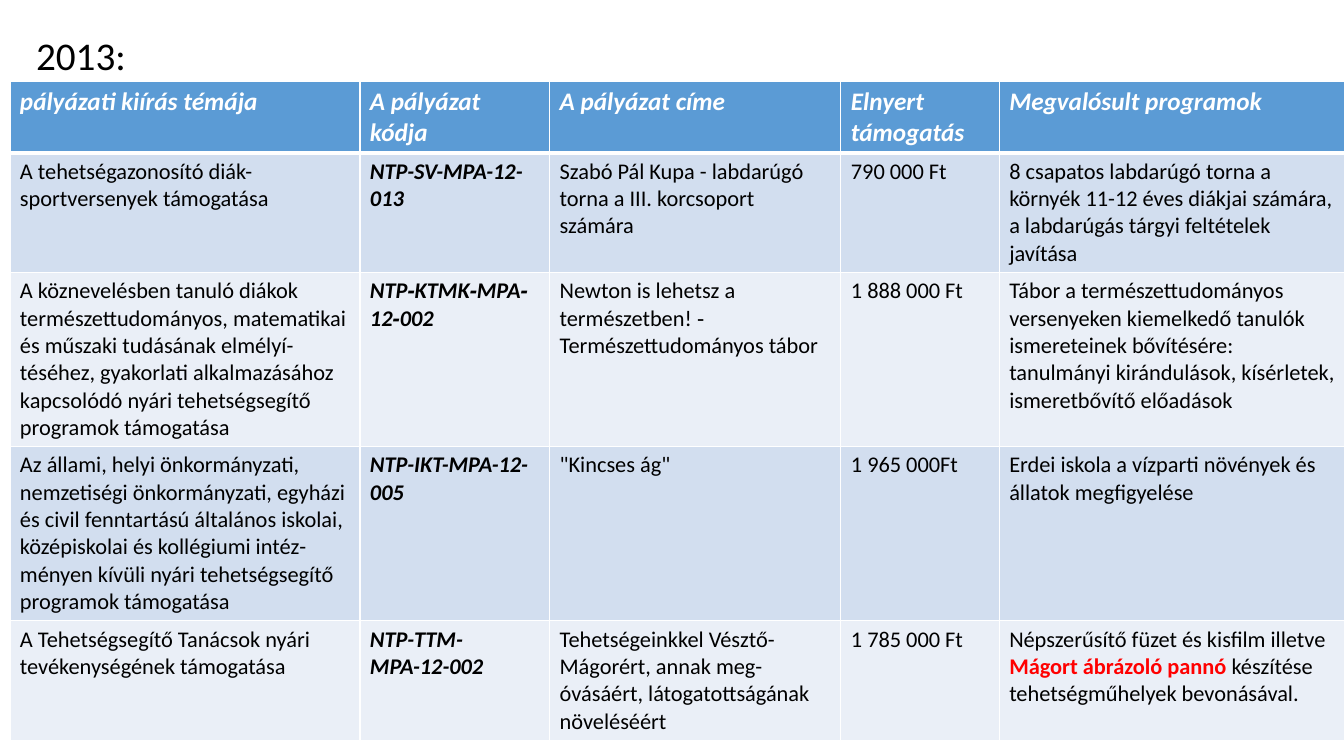
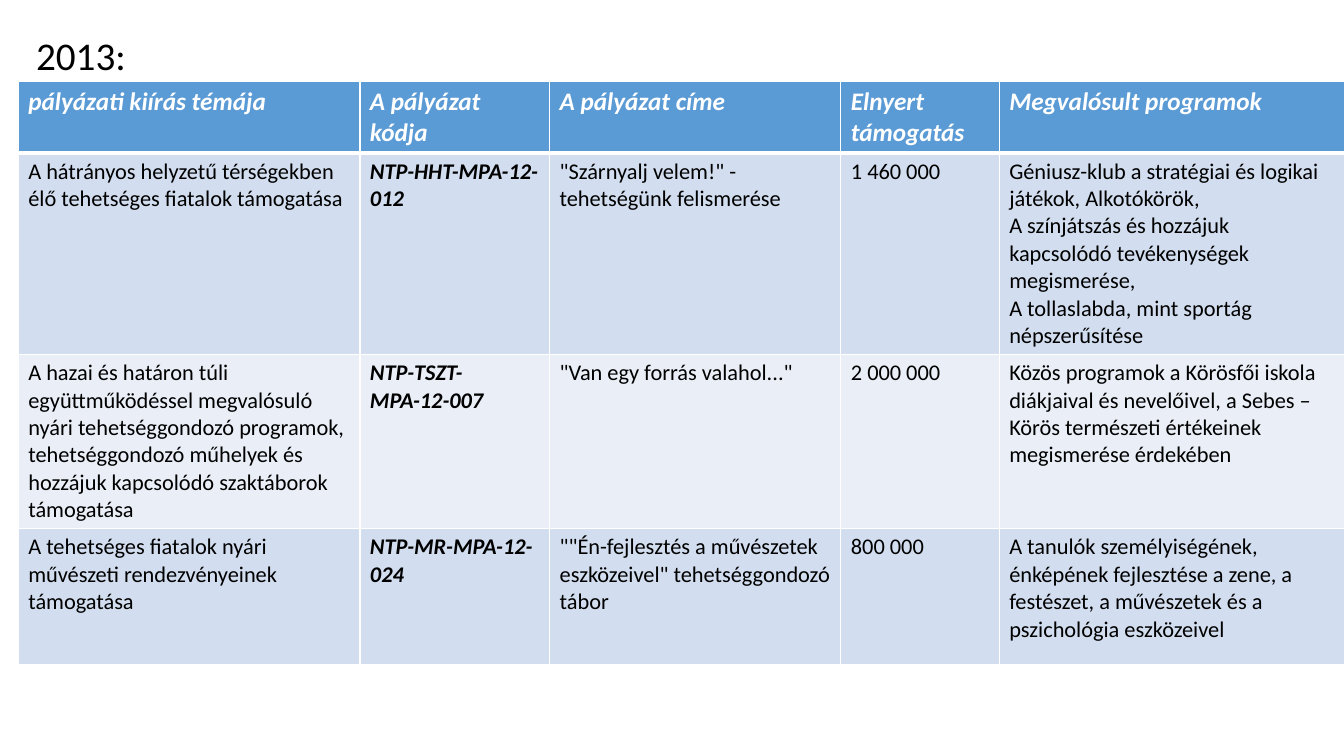
from dataclasses import dataclass

from lxml import etree
from pptx import Presentation
from pptx import slide as sld
from pptx import table as tbl
from pptx import util as u
from pptx.dml import color
from pptx.enum import lang
from pptx.oxml import ns
from pptx.text import text as txt


@dataclass(frozen=True)
class Theme:
    font: str = "Calibri"
    ink: str = "000000"
    paper: str = "FFFFFF"
    accent: str = "FF0000"
    header: str = "5B9BD5"
    bands: tuple[str, str] = ("D2DEEF", "EAEFF7")
    title_pt: int = 28
    header_pt: int = 18
    body_pt: int = 16
    rule_pt: int = 1
    header_rule_pt: int = 3


@dataclass(frozen=True)
class Run:
    words: str
    accent: bool = False


Paragraphs = tuple[tuple[Run, ...], ...]


def lines(*texts: str) -> Paragraphs:
    """Plain paragraphs of one run each."""
    return tuple((Run(words),) for words in texts)


@dataclass(frozen=True)
class Grant:
    topic: str
    code: str
    title: Paragraphs
    amount: str
    programmes: Paragraphs
    height: float
    code_lang: lang.MSO_LANGUAGE_ID = lang.MSO_LANGUAGE_ID.HUNGARIAN

    def cells(self) -> tuple[Paragraphs, ...]:
        return (lines(self.topic), lines(self.code), self.title,
                lines(self.amount), self.programmes)


@dataclass(frozen=True)
class GrantPage:
    left: float
    grants: tuple[Grant, ...]


THEME = Theme()
HEADINGS = ("pályázati kiírás témája", "A pályázat kódja", "A pályázat címe",
            "Elnyert támogatás", "Megvalósult programok")
YEAR = "2013:"
TABLE_TOP = 2.06
HEADER_HEIGHT = 1.79
CODE_LEFT = 9.07
CODE_COLUMN = 1
OTHER_WIDTHS = (4.78, 7.34, 3.99, 8.71)

PAGES = (
    GrantPage(0.25, (
        Grant("A tehetségazonosító diák-sportversenyek támogatása",
              "NTP-SV-MPA-12-013",
              lines("Szabó Pál Kupa - labdarúgó torna a III. korcsoport számára"),
              "790 000 Ft",
              lines("8 csapatos labdarúgó torna a környék 11-12 éves diákjai számára, "
                    "a labdarúgás tárgyi feltételek javítása"),
              3.01),
        Grant("A köznevelésben tanuló diákok természettudományos, matematikai és műszaki "
              "tudásának elmélyí-téséhez, gyakorlati alkalmazásához kapcsolódó nyári "
              "tehetségsegítő programok támogatása",
              "NTP‐KTMK‐MPA‐12‐002",
              lines("Newton is lehetsz a ", "természetben! ‐ ", "Természettudományos tábor"),
              "1 888 000 Ft",
              lines("Tábor a természettudományos versenyeken kiemelkedő tanulók ismereteinek "
                    "bővítésére: tanulmányi kirándulások, kísérletek, ismeretbővítő előadások"),
              4.39),
        Grant("Az állami, helyi önkormányzati, nemzetiségi önkormányzati, egyházi és civil "
              "fenntartású általános iskolai, középiskolai és kollégiumi intéz-ményen kívüli "
              "nyári tehetségsegítő programok támogatása",
              "NTP-IKT-MPA-12-005",
              lines('"Kincses ág"'),
              "1 965 000Ft",
              lines("Erdei iskola a vízparti növények és állatok megfigyelése"),
              4.39),
        Grant("A Tehetségsegítő Tanácsok nyári tevékenységének támogatása",
              "NTP-TTM-MPA-12-002",
              lines("Tehetségeinkkel Vésztő-Mágorért, annak meg-óvásáért, "
                    "látogatottságának növeléséért"),
              "1 785 000 Ft",
              ((Run("Népszerűsítő füzet és kisfilm illetve "),
                Run("Mágort ábrázoló pannó ", accent=True),
                Run("készítése tehetségműhelyek bevonásával.")),),
              3.01, lang.MSO_LANGUAGE_ID.ENGLISH_US),
    )),
    GrantPage(0.46, (
        Grant("A hátrányos helyzetű térségekben élő tehetséges fiatalok támogatása",
              "NTP-HHT-MPA-12-012",
              lines('"Szárnyalj velem!" - tehetségünk felismerése'),
              "1 460 000",
              lines("Géniusz-klub a stratégiai és logikai játékok, Alkotókörök,",
                    "A színjátszás és hozzájuk kapcsolódó tevékenységek megismerése,",
                    "A tollaslabda, mint sportág népszerűsítése"),
              5.08),
        Grant("A hazai és határon túli együttműködéssel megvalósuló nyári tehetséggondozó "
              "programok, tehetséggondozó műhelyek és hozzájuk kapcsolódó szaktáborok "
              "támogatása",
              "NTP-TSZT-MPA-12-007",
              lines('"Van egy forrás valahol..."'),
              "2 000 000",
              lines("Közös programok a Körösfői iskola diákjaival és nevelőivel, a Sebes – "
                    "Körös természeti értékeinek megismerése érdekében"),
              4.39, lang.MSO_LANGUAGE_ID.ENGLISH_US),
        Grant("A tehetséges fiatalok nyári művészeti rendezvényeinek támogatása",
              "NTP-MR-MPA-12-024",
              lines('""Én-fejlesztés a művészetek eszközeivel" tehetséggondozó tábor'),
              "800 000",
              lines("A tanulók személyiségének, énképének fejlesztése a zene, a festészet, "
                    "a művészetek és a pszichológia eszközeivel"),
              3.43),
    )),
)


def add_run(paragraph: txt._Paragraph, words: str, size: int, ink: str,
            bold: bool = False, italic: bool = False,
            language: lang.MSO_LANGUAGE_ID = lang.MSO_LANGUAGE_ID.HUNGARIAN) -> None:
    run = paragraph.add_run()
    run.text = words
    font = run.font
    font.name, font.size = THEME.font, u.Pt(size)
    font.bold, font.italic = bold, italic
    font.color.rgb = color.RGBColor.from_string(ink)
    font.language_id = language


def style_cell(cell: tbl._Cell, fill: str, top_pt: int, bottom_pt: int) -> None:
    """Draw the borders first: the schema wants them ahead of the fill."""
    properties = cell._tc.get_or_add_tcPr()
    widths = {"L": THEME.rule_pt, "R": THEME.rule_pt, "T": top_pt, "B": bottom_pt}
    for side, width in widths.items():
        border = etree.SubElement(properties, ns.qn(f"a:ln{side}"), w=str(u.Pt(width)))
        solid = etree.SubElement(border, ns.qn("a:solidFill"))
        etree.SubElement(solid, ns.qn("a:srgbClr"), val=THEME.paper)
    cell.fill.solid()
    cell.fill.fore_color.rgb = color.RGBColor.from_string(fill)


def add_year(slide: sld.Slide) -> None:
    box = slide.shapes.add_textbox(u.Cm(0.66), u.Cm(0.81), u.Cm(31.9), u.Cm(1.4))
    box.text_frame.word_wrap = True
    paragraph = box.text_frame.paragraphs[0]
    paragraph.line_spacing = 0.9
    add_run(paragraph, YEAR, THEME.title_pt, THEME.ink)


def fill_header(grid: tbl.Table) -> None:
    for cell, heading in zip(grid.rows[0].cells, HEADINGS):
        style_cell(cell, THEME.header, THEME.rule_pt, THEME.header_rule_pt)
        add_run(cell.text_frame.paragraphs[0], heading, THEME.header_pt, THEME.paper,
                bold=True, italic=True)


def fill_grant(grid: tbl.Table, row: int, grant: Grant) -> None:
    band = THEME.bands[(row - 1) % len(THEME.bands)]
    top_pt = THEME.header_rule_pt if row == 1 else THEME.rule_pt
    for column, paragraphs in enumerate(grant.cells()):
        cell = grid.cell(row, column)
        style_cell(cell, band, top_pt, THEME.rule_pt)
        is_code = column == CODE_COLUMN
        language = grant.code_lang if is_code else lang.MSO_LANGUAGE_ID.HUNGARIAN
        frame = cell.text_frame
        for index, runs in enumerate(paragraphs):
            paragraph = frame.add_paragraph() if index else frame.paragraphs[0]
            for run in runs:
                add_run(paragraph, run.words, THEME.body_pt,
                        THEME.accent if run.accent else THEME.ink,
                        is_code or run.accent, is_code, language)


def add_grants(slide: sld.Slide, page: GrantPage) -> None:
    widths = (CODE_LEFT - page.left, *OTHER_WIDTHS)
    heights = (HEADER_HEIGHT, *(grant.height for grant in page.grants))
    grid = slide.shapes.add_table(
        len(heights), len(widths), u.Cm(page.left), u.Cm(TABLE_TOP),
        u.Cm(sum(widths)), u.Cm(sum(heights))).table
    for column, width in zip(grid.columns, widths):
        column.width = u.Cm(width)
    for row, height in zip(grid.rows, heights):
        row.height = u.Cm(height)
    fill_header(grid)
    for number, grant in enumerate(page.grants, start=1):
        fill_grant(grid, number, grant)


def main() -> None:
    deck = Presentation()
    deck.slide_width, deck.slide_height = u.Cm(33.87), u.Cm(19.05)
    blank = deck.slide_layouts[6]
    for page in PAGES:
        slide = deck.slides.add_slide(blank)
        add_year(slide)
        add_grants(slide, page)
    deck.save("out.pptx")


if __name__ == "__main__":
    main()
